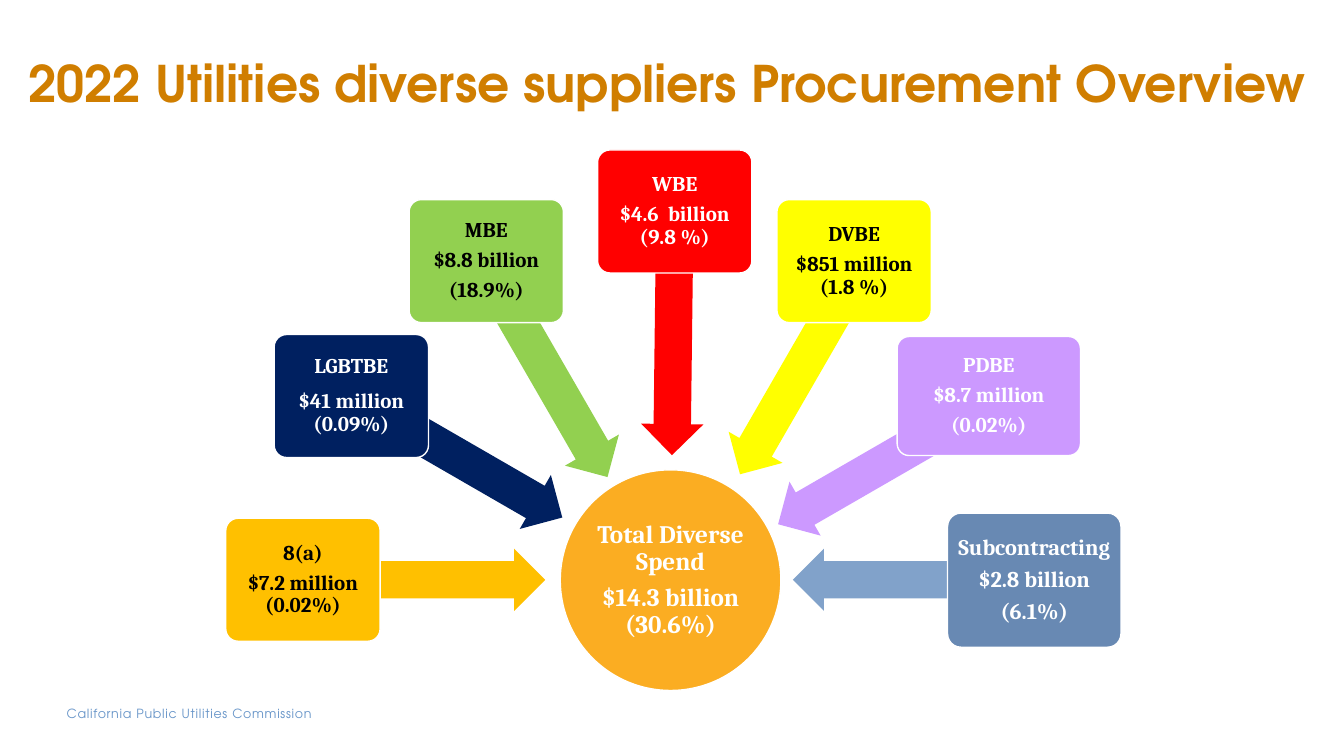
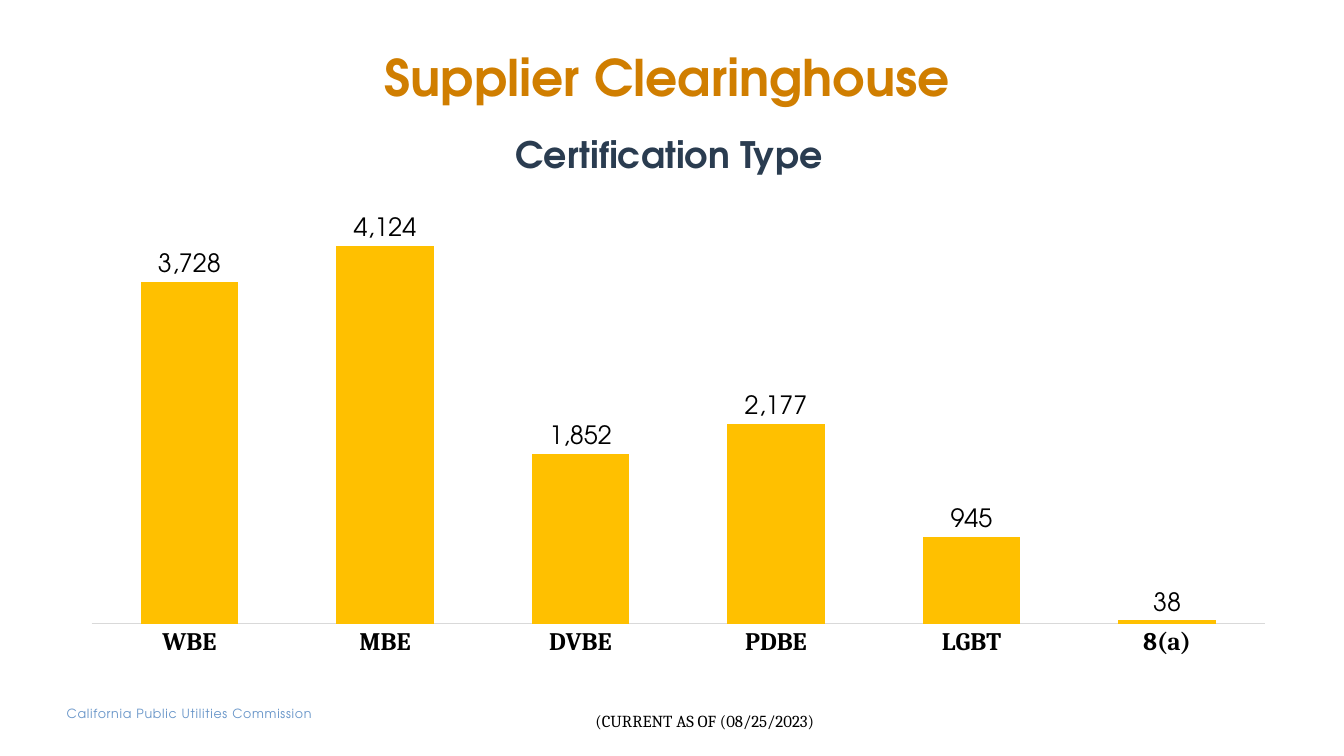
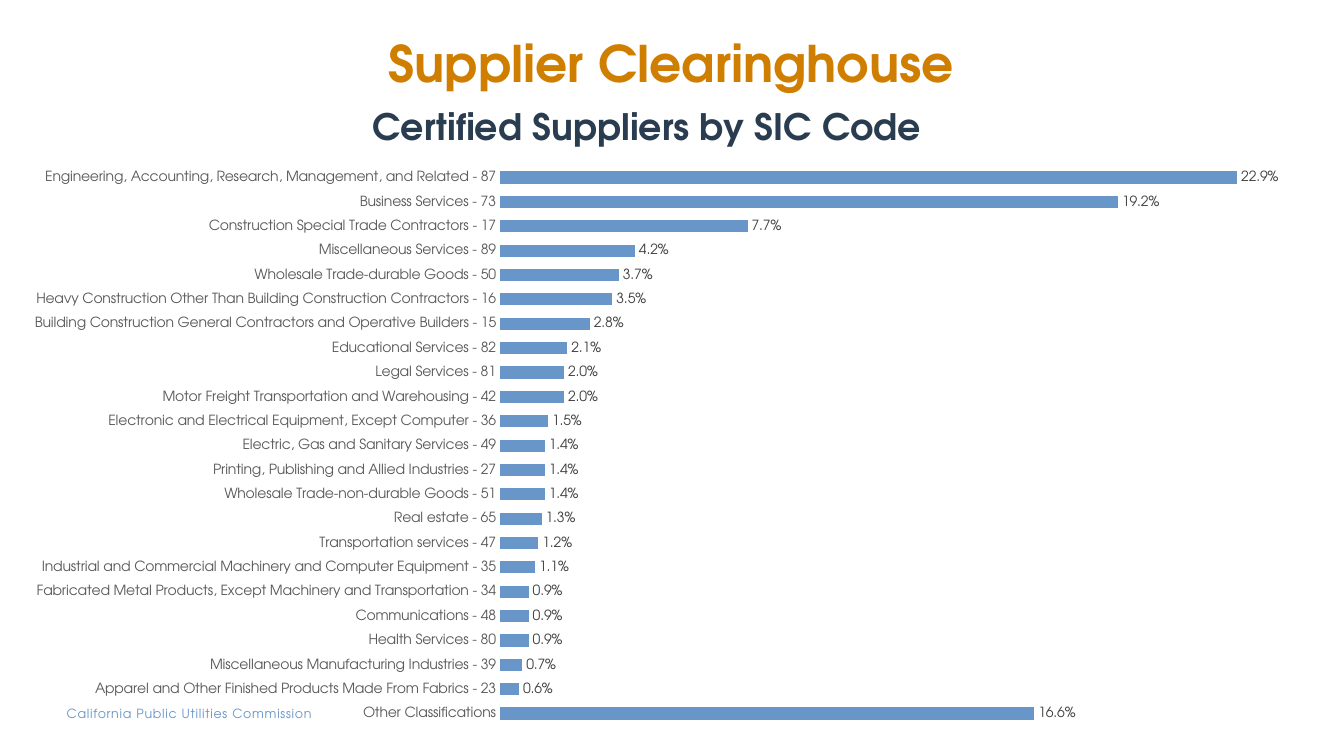
from pptx import Presentation
from pptx.chart.data import CategoryChartData
from pptx.dml.color import RGBColor
from pptx.enum.chart import XL_CHART_TYPE, XL_LABEL_POSITION, XL_TICK_MARK
from pptx.enum.shapes import MSO_SHAPE
from pptx.enum.text import MSO_ANCHOR, PP_ALIGN
from pptx.oxml import parse_xml
from pptx.oxml.ns import nsdecls
from pptx.util import Cm, Pt

SANS = "TeX Gyre Adventor"
SERIF = "Cambria"
WHITE = RGBColor(0xFF, 0xFF, 0xFF)
BLACK = RGBColor(0x00, 0x00, 0x00)
OCHRE = RGBColor(0xD0, 0x7E, 0x00)
SLATE = RGBColor(0x2A, 0x3C, 0x50)
BLUE = RGBColor(0x69, 0x96, 0xC9)
AMBER = RGBColor(0xFB, 0xAD, 0x22)
GOLD = RGBColor(0xFF, 0xC0, 0x00)
NAVY = RGBColor(0x00, 0x20, 0x60)
GREEN = RGBColor(0x92, 0xD0, 0x50)
RED = RGBColor(0xFF, 0x00, 0x00)
YELLOW = RGBColor(0xFF, 0xFF, 0x00)
LILAC = RGBColor(0xCC, 0x99, 0xFF)
SKY = RGBColor(0x81, 0xA2, 0xCA)
STEEL = RGBColor(0x68, 0x89, 0xB3)
RULE = RGBColor(0xD9, 0xD9, 0xD9)
GREY = RGBColor(0x59, 0x59, 0x59)
DARK = RGBColor(0x40, 0x40, 0x40)

WIDE, TALL = 33.87, 19.05
CARD = (3.89, 3.1)
SHAFT = (6.12, 1.57)

FLOWS = [
    ((10.68, 14.61), 180, GOLD, (5.69, 13.06), CARD, GOLD, BLACK, 15, 5.25,
     ["8(a)", "$7.2 million (0.02%)"]),
    ((11.52, 11.51), 210, NAVY, (6.91, 8.43), CARD, NAVY, WHITE, 15, 8.8,
     ["LGBTBE", "$41 million (0.09%)"]),
    ((13.78, 9.37), 240, GREEN, (10.31, 5.03), CARD, GREEN, BLACK, 15, 5.25,
     ["MBE", "$8.8 billion", "(18.9%)"]),
    ((16.97, 8.41), 270.7, RED, (15.06, 3.78), CARD, RED, WHITE, 15, 5.25,
     ["WBE", "$4.6  billion (9.8 %)"]),
    ((20.18, 9.3), 300, YELLOW, (19.58, 5.03), CARD, YELLOW, BLACK, 15, 5.25,
     ["DVBE", "$851 million (1.8 %)"]),
    ((22.26, 11.68), 330, LILAC, (22.61, 8.48), (4.62, 3), LILAC, WHITE, 15, 5.25,
     ["PDBE", "$8.7 million", "(0.02%)"]),
    ((23.04, 14.61), 0, SKY, (23.88, 12.93), (4.37, 3.38), STEEL, WHITE, 16, 5.6,
     ["Subcontracting", "$2.8 billion", "(6.1%)"]),
]

TYPES = [("WBE", 3728), ("MBE", 4124), ("DVBE", 1852), ("PDBE", 2177),
         ("LGBT", 945), ("8(a)", 38)]

CODES = [
    ("Engineering, Accounting, Research, Management, and Related - 87", 0.229),
    ("Business Services - 73", 0.192),
    ("Construction Special Trade Contractors - 17", 0.077),
    ("Miscellaneous Services - 89", 0.042),
    ("Wholesale Trade-durable Goods - 50", 0.037),
    ("Heavy Construction Other Than Building Construction Contractors - 16", 0.035),
    ("Building Construction General Contractors and Operative Builders - 15", 0.028),
    ("Educational Services - 82", 0.021),
    ("Legal Services - 81", 0.02),
    ("Motor Freight Transportation and Warehousing - 42", 0.02),
    ("Electronic and Electrical Equipment, Except Computer - 36", 0.015),
    ("Electric, Gas and Sanitary Services - 49", 0.014),
    ("Printing, Publishing and Allied Industries - 27", 0.014),
    ("Wholesale Trade-non-durable Goods - 51", 0.014),
    ("Real estate - 65", 0.013),
    ("Transportation services - 47", 0.012),
    ("Industrial and Commercial Machinery and Computer Equipment - 35", 0.011),
    ("Fabricated Metal Products, Except Machinery and Transportation - 34", 0.009),
    ("Communications - 48", 0.009),
    ("Health Services - 80", 0.009),
    ("Miscellaneous Manufacturing Industries - 39", 0.007),
    ("Apparel and Other Finished Products Made From Fabrics - 23", 0.006),
    ("Other Classifications", 0.166),
]


def style(font, face, size, color, bold=False):
    """Set the look of a font."""
    font.name, font.size, font.bold = face, Pt(size), bold
    font.color.rgb = color


def write(shape, lines, face, size, color, bold=False, align=PP_ALIGN.CENTER,
          space=None, after=0, inset=None, anchor=MSO_ANCHOR.TOP, wrap=True):
    """Fill a shape with styled paragraphs."""
    frame = shape.text_frame
    frame.text = "\n".join(lines)
    frame.word_wrap = wrap
    frame.vertical_anchor = anchor
    if inset:
        (frame.margin_left, frame.margin_top,
         frame.margin_right, frame.margin_bottom) = map(Cm, inset)
    for para in frame.paragraphs:
        para.alignment = align
        para.line_spacing = space
        para.space_after = Pt(after)
        for run in para.runs:
            style(run.font, face, size, color, bold)


def label(slide, box, text, *look, **more):
    """Add a one-line text box."""
    shape = slide.shapes.add_textbox(*map(Cm, box))
    write(shape, [text], *look, **more)
    return shape


def shape(slide, kind, box, fill, edge=None):
    """Add a flat preset shape."""
    item = slide.shapes.add_shape(kind, *map(Cm, box))
    item.shadow.inherit = False
    item.fill.solid()
    item.fill.fore_color.rgb = fill
    if edge is None:
        item.line.fill.background()
    else:
        item.line.color.rgb = edge
        item.line.width = Pt(1)
    return item


def base(deck, title, box):
    """Add a slide with the shared title and footer."""
    slide = deck.slides.add_slide(deck.slide_layouts[6])
    foot = label(slide, (1.68, 17.78, 8.15, 0.38),
                 "California Public Utilities Commission", SANS, 9, BLUE,
                 align=PP_ALIGN.LEFT, inset=(0, 0, 0, 0))
    for run in foot.text_frame.paragraphs[0].runs:
        run.font._element.set("spc", "50")
    label(slide, box, title, SANS, 36, OCHRE, True, space=0.9,
          inset=(0, 0.13, 0.25, 0.13), anchor=MSO_ANCHOR.BOTTOM)
    return slide


def flow(slide, mid, turn, tint, spot, size, fill, ink, point, after, lines):
    """Draw one arrow and the card it starts from."""
    wide, tall = SHAFT
    arrow = shape(slide, MSO_SHAPE.LEFT_ARROW,
                  (mid[0] - wide / 2, mid[1] - tall / 2, wide, tall), tint)
    arrow.adjustments[0], arrow.adjustments[1] = 0.6, 0.5
    arrow.rotation = turn
    card = shape(slide, MSO_SHAPE.ROUNDED_RECTANGLE, spot + size, fill, WHITE)
    card.adjustments[0] = 0.1
    write(card, lines, SERIF, point, ink, True, space=0.9, after=after,
          inset=(0.08,) * 4, anchor=MSO_ANCHOR.MIDDLE)


def hub(slide, box):
    """Draw the central total."""
    disc = shape(slide, MSO_SHAPE.OVAL, box, AMBER, WHITE)
    write(disc, ["Total Diverse Spend", "$14.3 billion (30.6%)"], SERIF, 18, WHITE,
          True, space=0.9, after=6.3, inset=(0.03,) * 4, anchor=MSO_ANCHOR.MIDDLE)


def frame(chart, area):
    """Fix the inner plot area as fractions of the chart."""
    plot = chart.element.chart.plotArea
    for old in plot.xpath("c:layout"):
        plot.remove(old)
    parts = "".join(f'<c:{key} val="{val}"/>' for key, val in zip("xywh", area))
    plot.insert(0, parse_xml(
        f'<c:layout {nsdecls("c")}><c:manualLayout><c:layoutTarget val="inner"/>'
        '<c:xMode val="edge"/><c:yMode val="edge"/>'
        f'{parts}</c:manualLayout></c:layout>'))


def bars(slide, kind, box, rows, area, top, form, color):
    """Add a plain one-series chart and return it."""
    data = CategoryChartData(number_format=form)
    data.categories = [name for name, _ in rows]
    data.add_series("Series 1", [val for _, val in rows])
    chart = slide.shapes.add_chart(kind, *map(Cm, box), data).chart
    style(chart.font, SANS, 10, BLACK)
    chart.has_legend = chart.has_title = False
    axis = chart.value_axis
    axis.visible = axis.has_major_gridlines = False
    axis.minimum_scale, axis.maximum_scale = 0, top
    chart.category_axis.major_tick_mark = XL_TICK_MARK.NONE
    plot = chart.plots[0]
    plot.vary_by_categories = False
    plot.gap_width = 100
    fill = plot.series[0].format.fill
    fill.solid()
    fill.fore_color.rgb = color
    plot.has_data_labels = True
    marks = plot.data_labels
    marks.show_value = True
    marks.position = XL_LABEL_POSITION.OUTSIDE_END
    marks.number_format, marks.number_format_is_linked = form, False
    frame(chart, area)
    return chart


def spend(deck):
    """Build the procurement overview slide."""
    slide = base(deck, "2022 Utilities diverse suppliers Procurement Overview",
                 (0, 1.02, WIDE, 1.98))
    hub(slide, (14.12, 11.84, 5.56, 5.56))
    for item in FLOWS:
        flow(slide, *item)


def types(deck):
    """Build the certification type slide."""
    slide = base(deck, "Supplier Clearinghouse", (1.7, 1.02, 30.48, 1.83))
    label(slide, (10.97, 3.2, 11.79, 1.37), "Certification Type",
          SANS, 26, SLATE, True)
    chart = bars(slide, XL_CHART_TYPE.COLUMN_CLUSTERED, (1.7, 5.08, 30.48, 12.09),
                 TYPES, (0.02, 0.02, 0.97, 0.86), 4500, "#,##0", GOLD)
    axis = chart.category_axis
    style(axis.tick_labels.font, SERIF, 18, BLACK, True)
    axis.format.line.color.rgb = RULE
    axis.format.line.width = Pt(0.75)
    style(chart.plots[0].data_labels.font, SANS, 18, BLACK)
    label(slide, (14.55, 17.78, 6.43, 0.76), "(CURRENT AS OF (08/25/2023)",
          SERIF, 12, BLACK, wrap=False)


def codes(deck):
    """Build the SIC code slide."""
    slide = base(deck, "Supplier Clearinghouse", (1.8, 0.66, 30.48, 1.83))
    label(slide, (9.14, 2.51, 15.62, 1.37), "Certified Suppliers by SIC Code",
          SANS, 26, SLATE, True, align=PP_ALIGN.LEFT)
    chart = bars(slide, XL_CHART_TYPE.BAR_CLUSTERED, (0.2, 3.89, 33.32, 14.71),
                 CODES[::-1], (0.372, 0.019, 0.609, 0.96), 0.25, "0.0%", BLUE)
    axis = chart.category_axis
    style(axis.tick_labels.font, SANS, 10, GREY)
    axis.format.line.fill.background()
    style(chart.plots[0].data_labels.font, SANS, 10, DARK)


def main():
    """Build and save the deck."""
    deck = Presentation()
    deck.slide_width, deck.slide_height = Cm(WIDE), Cm(TALL)
    for build in (spend, types, codes):
        build(deck)
    deck.save("out.pptx")


if __name__ == "__main__":
    main()
